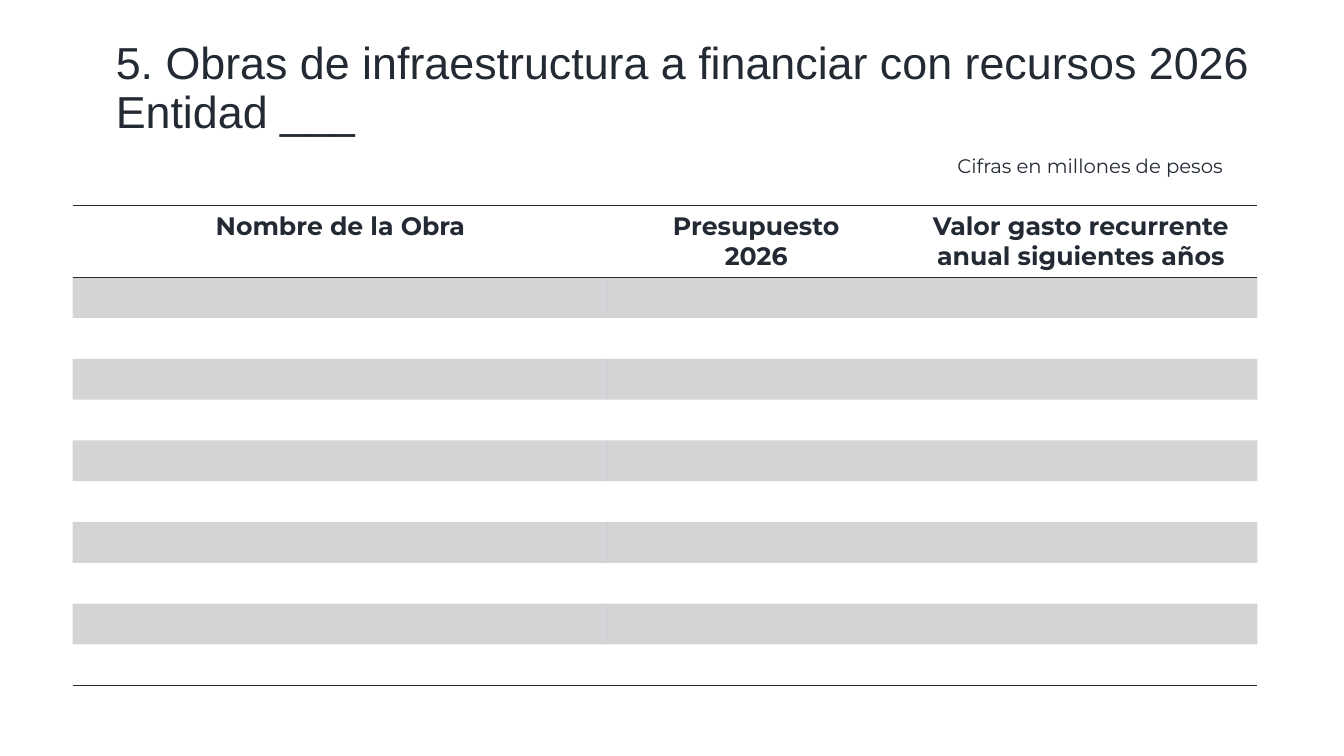
from lxml import etree
from pptx import Presentation
from pptx.dml.color import RGBColor
from pptx.enum.text import MSO_ANCHOR, PP_ALIGN
from pptx.oxml.ns import qn
from pptx.util import Inches, Pt

LEFT, CENTER, RIGHT = PP_ALIGN.LEFT, PP_ALIGN.CENTER, PP_ALIGN.RIGHT
TOP = MSO_ANCHOR.TOP
COLORS = {"ink": "232A34"}
PLAIN_TABLE_STYLE = "{2D5ABB26-0587-4C30-8999-92F81FD0307C}"
BAND_OPACITY = 20

TITLE_LINES = ["5. Obras de infraestructura a financiar con recursos 2026", "Entidad ___"]
UNITS_NOTE = "Cifras en millones de pesos"
HEADERS = [
    ["Nombre de la Obra"],
    ["Presupuesto", "2026"],
    ["Valor gasto recurrente anual siguientes años"],
]
COLUMN_WIDTHS = [5.31, 2.94, 3.5]
BODY_ROWS = 10
HEADER_HEIGHT, TABLE_HEIGHT = 0.71, 4.76


def add_run(paragraph, text, font, size, bold=False):
    run = paragraph.add_run()
    run.text = text
    run.font.name = font
    run.font.size = Pt(size)
    run.font.bold = bold
    run.font.color.rgb = RGBColor.from_string(COLORS["ink"])


def add_text(slide, box, lines, font, size, align, spacing=1.0):
    """Add one paragraph whose lines are parted by line breaks."""
    frame = slide.shapes.add_textbox(*map(Inches, box)).text_frame
    frame.word_wrap = True
    frame.vertical_anchor = TOP
    paragraph = frame.paragraphs[0]
    paragraph.alignment = align
    paragraph.line_spacing = spacing
    for index, line in enumerate(lines):
        if index:
            paragraph.add_line_break()
        add_run(paragraph, line, font, size)


def add_rules(cell, *sides):
    """Draw 1 pt borders; sides are given in the order lnT, lnB."""
    properties = cell._tc.get_or_add_tcPr()
    for position, side in enumerate(sides):
        line = etree.Element(qn(f"a:{side}"), w=str(Pt(1)))
        solid = etree.SubElement(line, qn("a:solidFill"))
        etree.SubElement(solid, qn("a:srgbClr"), val=COLORS["ink"])
        properties.insert(position, line)


def fill_band(cell):
    cell.fill.solid()
    cell.fill.fore_color.rgb = RGBColor.from_string(COLORS["ink"])
    color = cell._tc.tcPr.find(f"{qn('a:solidFill')}/{qn('a:srgbClr')}")
    etree.SubElement(color, qn("a:alpha"), val=str(BAND_OPACITY * 1000))


def fill_header(cell, lines):
    for index, line in enumerate(lines):
        frame = cell.text_frame
        paragraph = frame.add_paragraph() if index else frame.paragraphs[0]
        paragraph.alignment = CENTER
        add_run(paragraph, line, "Montserrat", 18, bold=True)
    add_rules(cell, "lnT", "lnB")


def add_works_table(slide):
    table = slide.shapes.add_table(
        BODY_ROWS + 1, len(HEADERS),
        Inches(0.72), Inches(2.04), Inches(sum(COLUMN_WIDTHS)), Inches(TABLE_HEIGHT),
    ).table
    table.first_row = table.horz_banding = False
    table._tbl.tblPr.find(qn("a:tableStyleId")).text = PLAIN_TABLE_STYLE

    for column, width in zip(table.columns, COLUMN_WIDTHS):
        column.width = Inches(width)
    body_height = (TABLE_HEIGHT - HEADER_HEIGHT) / BODY_ROWS
    for index, row in enumerate(table.rows):
        row.height = Inches(body_height if index else HEADER_HEIGHT)
        for cell, header in zip(row.cells, HEADERS):
            if index % 2:
                fill_band(cell)
            else:
                cell.fill.background()
            if index == 0:
                fill_header(cell, header)
            elif index == BODY_ROWS:
                add_rules(cell, "lnB")


def main():
    presentation = Presentation()
    presentation.slide_width = Inches(13.33)
    presentation.slide_height = Inches(7.5)
    slide = presentation.slides.add_slide(presentation.slide_layouts[6])

    add_text(slide, (1.05, 0.36, 11.99, 0.9), TITLE_LINES, "Arial", 32, LEFT, 0.9)
    add_works_table(slide)
    add_text(slide, (8.4, 1.48, 3.83, 0.34), [UNITS_NOTE], "Montserrat", 14, RIGHT)
    presentation.save("out.pptx")


if __name__ == "__main__":
    main()
